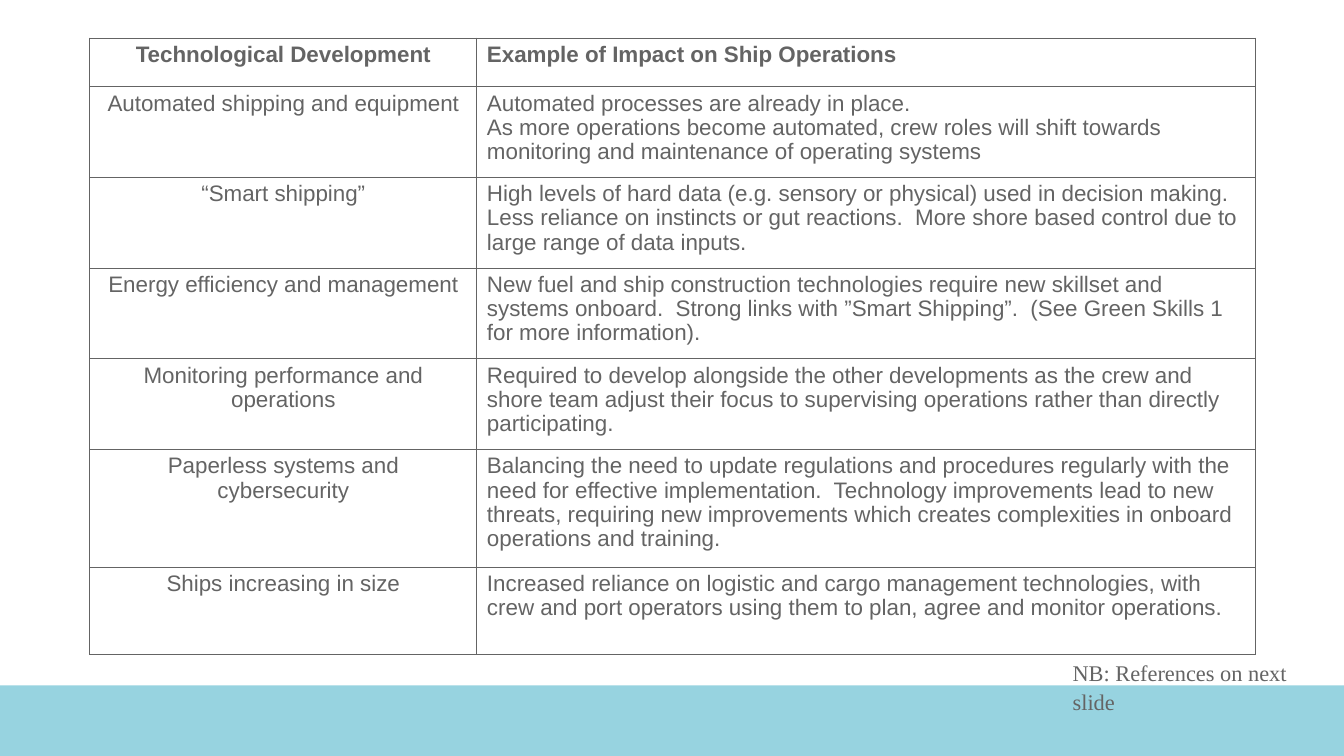
"""Build a slide with a table of technological developments in shipping."""
from dataclasses import dataclass

from lxml.etree import SubElement
from pptx import Presentation
from pptx.dml.color import RGBColor as Rgb
from pptx.enum.shapes import MSO_SHAPE as Preset
from pptx.enum.text import PP_ALIGN as Align
from pptx.oxml.ns import qn
from pptx.util import Inches, Pt


@dataclass(frozen=True)
class Theme:
    ink: str = "646464"
    band: str = "97D3E0"
    table_font: str = "Arial"
    note_font: str = "Times New Roman"
    text_size: int = 16
    rule_width: int = 1


HEADINGS = ("Technological Development", "Example of Impact on Ship Operations")
DEVELOPMENTS = [
    ("Automated shipping and equipment",
     "Automated processes are already in place.\n"
     "As more operations become automated, crew roles will shift towards "
     "monitoring and maintenance of operating systems"),
    ("“Smart shipping”",
     "High levels of hard data (e.g. sensory or physical) used in decision making.  "
     "Less reliance on instincts or gut reactions.  More shore based control due to "
     "large range of data inputs."),
    ("Energy efficiency and management",
     "New fuel and ship construction technologies require new skillset and systems "
     "onboard.  Strong links with ”Smart Shipping”.  (See Green Skills 1 for more "
     "information)."),
    ("Monitoring performance and operations",
     "Required to develop alongside the other developments as the crew and shore team "
     "adjust their focus to supervising operations rather than directly participating."),
    ("Paperless systems and cybersecurity",
     "Balancing the need to update regulations and procedures regularly with the need "
     "for effective implementation.  Technology improvements lead to new threats, "
     "requiring new improvements which creates complexities in onboard operations and "
     "training."),
    ("Ships increasing in size",
     "Increased reliance on logistic and cargo management technologies, with crew and "
     "port operators using them to plan, agree and monitor operations."),
]
COLUMN_WIDTHS = (3.84, 7.72)
ROW_HEIGHTS = (0.48, 0.9, 0.9, 0.9, 0.9, 1.17, 0.86)


def write(frame, text, *, font, size, color, bold=False, align=Align.LEFT, spacing=1.0):
    frame.word_wrap = True
    frame.text = text
    for paragraph in frame.paragraphs:
        paragraph.alignment = align
        paragraph.line_spacing = spacing
        for run in paragraph.runs:
            run.font.name = font
            run.font.size = Pt(size)
            run.font.bold = bold
            run.font.color.rgb = Rgb.from_string(color)


class SlideBuilder:
    def __init__(self, slide, theme):
        self.slide = slide
        self.theme = theme

    def band(self, left, top, width, height):
        footer = self.slide.shapes.add_shape(
            Preset.RECTANGLE, *map(Inches, (left, top, width, height)))
        footer.shadow.inherit = False
        footer.fill.solid()
        footer.fill.fore_color.rgb = Rgb.from_string(self.theme.band)
        footer.line.fill.background()

    def rule_cell(self, cell):
        properties = cell._tc.get_or_add_tcPr()
        for side in ("a:lnL", "a:lnR", "a:lnT", "a:lnB"):
            rule = SubElement(properties, qn(side), w=str(Pt(self.theme.rule_width)))
            ink = SubElement(rule, qn("a:solidFill"))
            SubElement(ink, qn("a:srgbClr"), val=self.theme.ink)

    def table(self, left, top, widths, heights, rows):
        grid = self.slide.shapes.add_table(
            len(rows), len(widths), Inches(left), Inches(top),
            Inches(sum(widths)), Inches(sum(heights))).table
        grid.first_row = grid.horz_banding = False
        for column, width in zip(grid.columns, widths):
            column.width = Inches(width)
        for row, height in zip(grid.rows, heights):
            row.height = Inches(height)
        for row_index, row in enumerate(rows):
            for column_index, text in enumerate(row):
                cell = grid.cell(row_index, column_index)
                self.rule_cell(cell)
                cell.fill.background()
                write(cell.text_frame, text, font=self.theme.table_font,
                      size=self.theme.text_size, color=self.theme.ink,
                      bold=row_index == 0, spacing=0.97,
                      align=Align.LEFT if column_index else Align.CENTER)

    def note(self, left, top, width, height, text):
        reference = self.slide.shapes.add_textbox(
            *map(Inches, (left, top, width, height)))
        write(reference.text_frame, text, font=self.theme.note_font,
              size=self.theme.text_size, color=self.theme.ink, spacing=1.07)


def main():
    deck = Presentation()
    deck.slide_width, deck.slide_height = Inches(13.33), Inches(7.5)
    builder = SlideBuilder(deck.slides.add_slide(deck.slide_layouts[6]), Theme())
    builder.band(0, 6.8, 13.33, 0.7)
    builder.table(0.89, 0.38, COLUMN_WIDTHS, ROW_HEIGHTS, [HEADINGS, *DEVELOPMENTS])
    builder.note(10.54, 6.47, 2.75, 0.37, "NB: References on next slide")
    deck.save("out.pptx")


if __name__ == "__main__":
    main()
